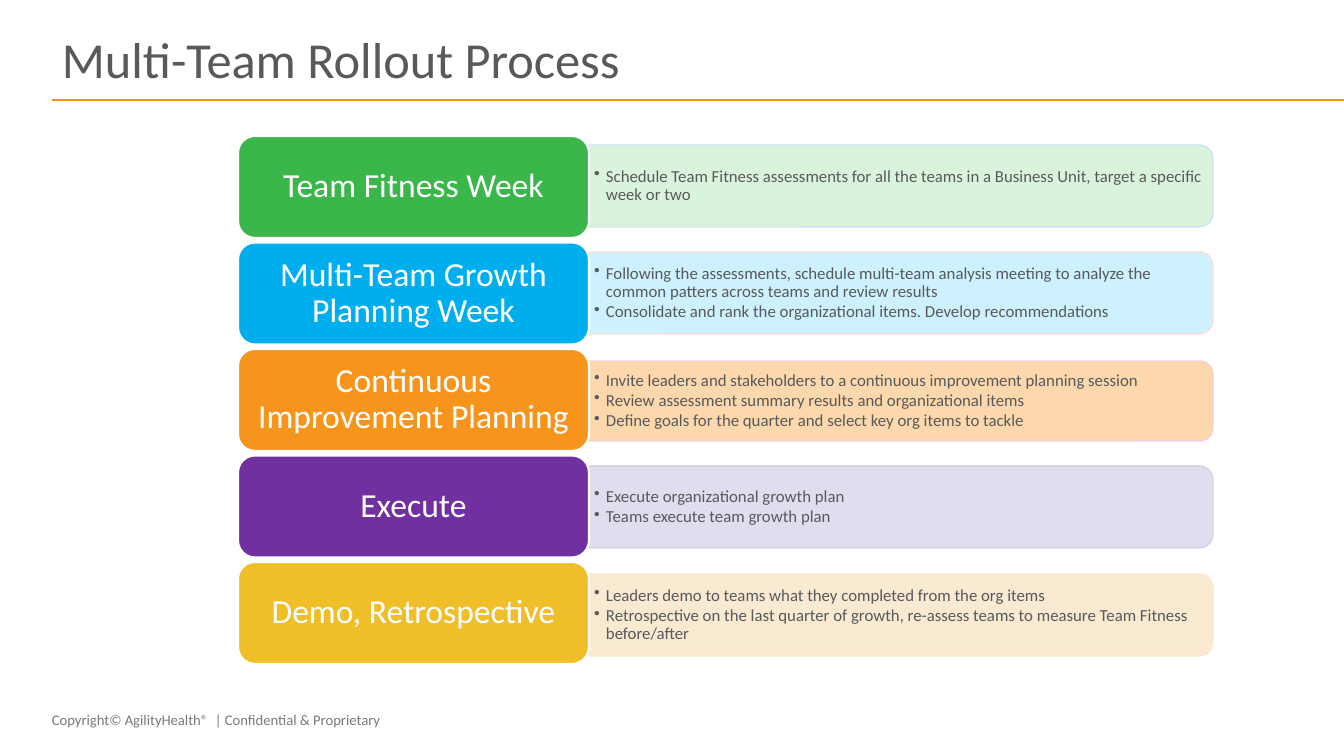
from dataclasses import dataclass

from lxml.etree import SubElement
from pptx import Presentation
from pptx.dml.color import RGBColor
from pptx.enum.shapes import MSO_CONNECTOR, MSO_SHAPE
from pptx.enum.text import MSO_ANCHOR, PP_ALIGN
from pptx.oxml.ns import qn
from pptx.util import Pt

TITLE = "Multi-Team Rollout Process"
FOOTER = "Copyright© AgilityHealth®  | Confidential & Proprietary"

STEPS = [
    {"label": "Team Fitness Week", "color": "3AB64B", "tint": "D6F2DA", "edge": "CCE3F8",
     "panel": (145, 82),
     "points": ["Schedule Team Fitness assessments for all the teams in a Business Unit, "
                "target a specific week or two"]},
    {"label": "Multi-Team Growth Planning Week", "color": "00AEEE", "tint": "C9F0FF",
     "edge": "FCDCCD", "panel": (252, 82),
     "points": ["Following the assessments, schedule multi-team analysis meeting to analyze "
                "the common patters across teams and review results",
                "Consolidate and rank the organizational items. Develop recommendations"]},
    {"label": "Continuous Improvement Planning", "color": "F7941C", "tint": "FCD4A4",
     "edge": "F8CDD7", "panel": (361, 80),
     "points": ["Invite leaders and stakeholders to a continuous improvement planning session",
                "Review assessment summary results and organizational items",
                "Define goals for the quarter and select key org items to tackle"]},
    {"label": "Execute", "color": "7030A0", "tint": "DFDAED", "edge": "D3D0DF",
     "panel": (466, 82),
     "points": ["Execute organizational growth plan", "Teams execute team growth plan"]},
    {"label": "Demo, Retrospective", "color": "F0BE28", "tint": "F9E8CD", "edge": "F9E8CD",
     "panel": (574, 82),
     "points": ["Leaders demo to teams what they completed from the org items",
                "Retrospective on the last quarter of growth, re-assess teams to measure "
                "Team Fitness before/after"]},
]


@dataclass(frozen=True)
class Theme:
    font: str = "Calibri"
    ink: str = "58595B"
    muted: str = "7A7A7A"
    accent: str = "F7941C"
    white: str = "FFFFFF"
    title_size: float = 36
    label_size: float = 24
    point_size: float = 12
    footer_size: float = 10.5


THEME = Theme()
SLIDE_W, SLIDE_H = 1344, 756
LABEL_LEFT, LABEL_TOP, LABEL_W, LABEL_H = 238, 136, 351, 102
STEP_PITCH = 106.5
PANEL_LEFT, PANEL_W = 589, 624
POINTS_W, POINTS_TRIM = 620, 4
POINT_INDENT = 12


def px(length):
    return round(length * 914400 / 100.8)


def rgb(color):
    return RGBColor.from_string(color)


def write(paragraph, text, size, color):
    run = paragraph.add_run()
    run.text = text
    run.font.name = THEME.font
    run.font.size = Pt(size)
    run.font.color.rgb = rgb(color)


def add_textbox(slide, left, top, width, height):
    frame = slide.shapes.add_textbox(px(left), px(top), px(width), px(height)).text_frame
    frame.word_wrap = True
    return frame


def add_block(slide, preset, left, top, width, height, fill, edge, weight):
    block = slide.shapes.add_shape(preset, px(left), px(top), px(width), px(height))
    block.shadow.inherit = False
    block.fill.solid()
    block.fill.fore_color.rgb = rgb(fill)
    block.line.color.rgb = rgb(edge)
    block.line.width = Pt(weight)
    return block


def add_panel(slide, step):
    top, height = step["panel"]
    left = PANEL_LEFT + (PANEL_W - height) / 2
    upright_top = top + (height - PANEL_W) / 2
    panel = add_block(slide, MSO_SHAPE.ROUND_2_SAME_RECTANGLE, left, upright_top,
                      height, PANEL_W, step["tint"], step["edge"], 1)
    panel.rotation = 90
    for color in panel._element.spPr.iter(qn("a:srgbClr")):
        SubElement(color, qn("a:alpha"), val="90000")


def add_points(slide, step):
    top, height = step["panel"]
    frame = add_textbox(slide, PANEL_LEFT, top + POINTS_TRIM, POINTS_W, height - 2 * POINTS_TRIM)
    frame.vertical_anchor = MSO_ANCHOR.MIDDLE
    frame.margin_left = frame.margin_right = px(5)
    frame.margin_top = frame.margin_bottom = px(3)
    for index, point in enumerate(step["points"]):
        paragraph = frame.paragraphs[0] if index == 0 else frame.add_paragraph()
        paragraph.level = 1
        paragraph.line_spacing = 0.9
        paragraph.space_after = Pt(1.5)
        properties = paragraph._p.get_or_add_pPr()
        properties.set("marL", str(px(POINT_INDENT)))
        properties.set("indent", str(-px(POINT_INDENT)))
        SubElement(properties, qn("a:buChar"), char="•")
        write(paragraph, point, THEME.point_size, THEME.ink)


def add_label(slide, step, top):
    label = add_block(slide, MSO_SHAPE.ROUNDED_RECTANGLE, LABEL_LEFT, top, LABEL_W, LABEL_H,
                      step["color"], THEME.white, 1.5)
    frame = label.text_frame
    frame.word_wrap = True
    frame.vertical_anchor = MSO_ANCHOR.MIDDLE
    paragraph = frame.paragraphs[0]
    paragraph.alignment = PP_ALIGN.CENTER
    paragraph.line_spacing = 0.9
    write(paragraph, step["label"], THEME.label_size, THEME.white)


def main():
    presentation = Presentation()
    presentation.slide_width, presentation.slide_height = px(SLIDE_W), px(SLIDE_H)
    slide = presentation.slides.add_slide(presentation.slide_layouts[6])

    footer = add_textbox(slide, 42, 706, 454, 28)
    write(footer.paragraphs[0], FOOTER, THEME.footer_size, THEME.muted)

    rule = slide.shapes.add_connector(MSO_CONNECTOR.STRAIGHT, px(52), px(100), px(SLIDE_W), px(100))
    rule.line.color.rgb = rgb(THEME.accent)
    rule.line.width = Pt(2)
    SubElement(rule._element.spPr, qn("a:effectLst"))

    title = add_textbox(slide, 52, 27, 1239, 71)
    title.vertical_anchor = MSO_ANCHOR.MIDDLE
    title.paragraphs[0].line_spacing = 0.9
    write(title.paragraphs[0], TITLE, THEME.title_size, THEME.ink)

    for index, step in enumerate(STEPS):
        add_panel(slide, step)
        add_points(slide, step)
        add_label(slide, step, LABEL_TOP + index * STEP_PITCH)

    presentation.save("out.pptx")


if __name__ == "__main__":
    main()
